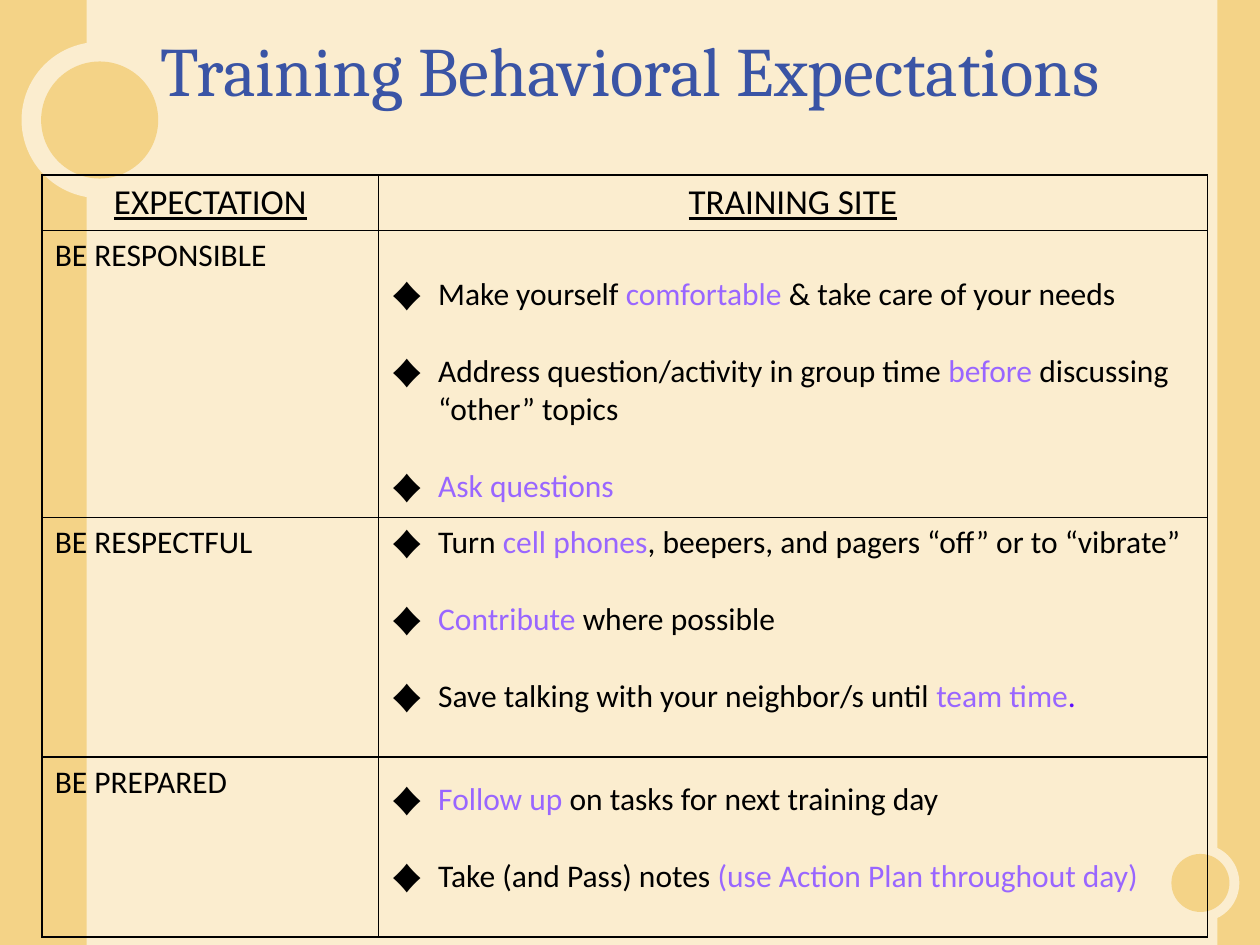
from dataclasses import dataclass

from lxml import etree
from pptx import Presentation
from pptx.dml.color import RGBColor
from pptx.enum.shapes import MSO_SHAPE
from pptx.enum.text import MSO_ANCHOR, MSO_AUTO_SIZE, PP_ALIGN
from pptx.oxml.ns import qn
from pptx.util import Cm, Pt

RECTANGLE, OVAL = MSO_SHAPE.RECTANGLE, MSO_SHAPE.OVAL
CENTER, LEFT = PP_ALIGN.CENTER, PP_ALIGN.LEFT
MIDDLE, NO_AUTOFIT = MSO_ANCHOR.MIDDLE, MSO_AUTO_SIZE.NONE
TITLE_ONLY = 5


@dataclass(frozen=True)
class Theme:
    cream: str = "FBEDCF"
    gold: str = "F4D387"
    title: str = "3A54A5"
    text: str = "000000"
    accent: str = "9966FF"
    stop: str = "5E0DFF"
    title_font: str = "Cambria"
    body_font: str = "Calibri"
    title_size: float = 39.6
    header_size: float = 20
    body_size: float = 18
    line_height: float = 22
    border: float = 1


THEME = Theme()
WIDTH, HEIGHT = 25.4, 19.05
HANGING = Cm(0.95)
COLUMNS = (6.78, 16.71)
HEADINGS = ("EXPECTATION", "TRAINING SITE")

# Expectation, row height, top margin, bullets; each bullet is (text, colour) runs
HEADER_HEIGHT = 1.12
EXPECTATIONS = [
    ("BE RESPONSIBLE", 5.78, 0.9, [
        [("Make yourself ", THEME.text), ("comfortable ", THEME.accent),
         ("& take care of your needs", THEME.text)],
        [("Address question/activity in group time ", THEME.text),
         ("before", THEME.accent), (" discussing “other” topics", THEME.text)],
        [("Ask questions", THEME.accent)],
    ]),
    ("BE RESPECTFUL", 4.83, 0.13, [
        [("Turn ", THEME.text), ("cell phones", THEME.accent),
         (", beepers, and pagers “off” or to “vibrate”", THEME.text)],
        [("Contribute ", THEME.accent), ("where possible", THEME.text)],
        [("Save talking with your neighbor/s until ", THEME.text),
         ("team time", THEME.accent), (".", THEME.stop)],
    ]),
    ("BE PREPARED", 3.63, 0.47, [
        [("Follow up ", THEME.accent),
         ("on tasks for next training day", THEME.text)],
        [("Take (and Pass) notes ", THEME.text),
         ("(use Action Plan throughout day)", THEME.accent)],
    ]),
]


def rgb(colour):
    return RGBColor.from_string(colour)


def style(font, name, size, colour):
    font.name, font.size = name, Pt(size)
    font.color.rgb = rgb(colour)


def add_plain(slide, preset, left, top, width, height, colour):
    decoration = slide.shapes.add_shape(
        preset, Cm(left), Cm(top), Cm(width), Cm(height))
    decoration.shadow.inherit = False
    decoration.fill.solid()
    decoration.fill.fore_color.rgb = rgb(colour)
    decoration.line.fill.background()


def add_ring(slide, center_x, center_y, outer, inner):
    for diameter, colour in ((outer, THEME.cream), (inner, THEME.gold)):
        add_plain(slide, OVAL, center_x - diameter / 2,
                  center_y - diameter / 2, diameter, diameter, colour)


def add_backdrop(slide):
    slide.background.fill.solid()
    slide.background.fill.fore_color.rgb = rgb(THEME.cream)
    for left, width in ((24.54, 0.86), (0, 1.75)):
        add_plain(slide, RECTANGLE, left, 0, width, HEIGHT, THEME.gold)
    add_ring(slide, 2.01, 2.42, 3.15, 2.36)
    add_ring(slide, 24.2, 17.8, 1.57, 1.17)


def place_title(slide, wording):
    title = slide.shapes.title
    title.left, title.top = Cm(1.27), Cm(0.43)
    title.width, title.height = Cm(22.86), Cm(1.93)
    frame = title.text_frame
    frame.text = wording
    frame.auto_size, frame.vertical_anchor = NO_AUTOFIT, MIDDLE
    heading = frame.paragraphs[0]
    heading.alignment = CENTER
    style(heading.font, THEME.title_font, THEME.title_size, THEME.title)
    # Bring the title in front of the backdrop
    slide.shapes._spTree.append(title._element)


def format_cell(cell):
    cell.fill.background()
    properties = cell._tc.get_or_add_tcPr()
    for position, side in enumerate(("a:lnL", "a:lnR", "a:lnT", "a:lnB")):
        line = etree.Element(qn(side), w=str(Pt(THEME.border)))
        fill = etree.SubElement(line, qn("a:solidFill"))
        etree.SubElement(fill, qn("a:srgbClr"), val=THEME.text)
        properties.insert(position, line)


def write_label(cell, wording, size, alignment=LEFT, underline=False):
    cell.text = wording
    label = cell.text_frame.paragraphs[0]
    label.alignment = alignment
    style(label.font, THEME.body_font, size, THEME.text)
    label.font.underline = underline


def add_bullet(paragraph):
    properties = paragraph._p.get_or_add_pPr()
    properties.set("marL", str(HANGING))
    properties.set("indent", str(-HANGING))
    colour = etree.SubElement(properties, qn("a:buClr"))
    etree.SubElement(colour, qn("a:srgbClr"), val=THEME.text)
    etree.SubElement(properties, qn("a:buFont"), typeface=THEME.body_font)
    etree.SubElement(properties, qn("a:buChar"), char="♦")


def write_bullets(cell, bullets):
    frame = cell.text_frame
    for index, runs in enumerate(bullets):
        bullet = frame.add_paragraph() if index else frame.paragraphs[0]
        add_bullet(bullet)
        if index:
            bullet.space_before = Pt(THEME.line_height)
        bullet.font.name = THEME.body_font
        bullet.font.size = Pt(THEME.body_size)
        for wording, colour in runs:
            run = bullet.add_run()
            run.text = wording
            run.font.color.rgb = rgb(colour)


def add_expectations(slide):
    heights = [HEADER_HEIGHT] + [row[1] for row in EXPECTATIONS]
    table = slide.shapes.add_table(
        len(heights), len(COLUMNS), Cm(0.85), Cm(3.53),
        Cm(sum(COLUMNS)), Cm(sum(heights))).table
    table.first_row = table.horz_banding = False
    for column, width in zip(table.columns, COLUMNS):
        column.width = Cm(width)
    for row, height in zip(table.rows, heights):
        row.height = Cm(height)
    for cell in table.iter_cells():
        format_cell(cell)

    for column, heading in enumerate(HEADINGS):
        write_label(table.cell(0, column), heading, THEME.header_size,
                    CENTER, underline=True)
    for row, (name, _, margin, bullets) in enumerate(EXPECTATIONS, start=1):
        write_label(table.cell(row, 0), name, THEME.body_size)
        site = table.cell(row, 1)
        site.margin_top = Cm(margin)
        write_bullets(site, bullets)


def main():
    deck = Presentation()
    deck.slide_width, deck.slide_height = Cm(WIDTH), Cm(HEIGHT)
    slide = deck.slides.add_slide(deck.slide_layouts[TITLE_ONLY])
    add_backdrop(slide)
    place_title(slide, "Training Behavioral Expectations")
    add_expectations(slide)
    deck.save("out.pptx")


if __name__ == "__main__":
    main()
